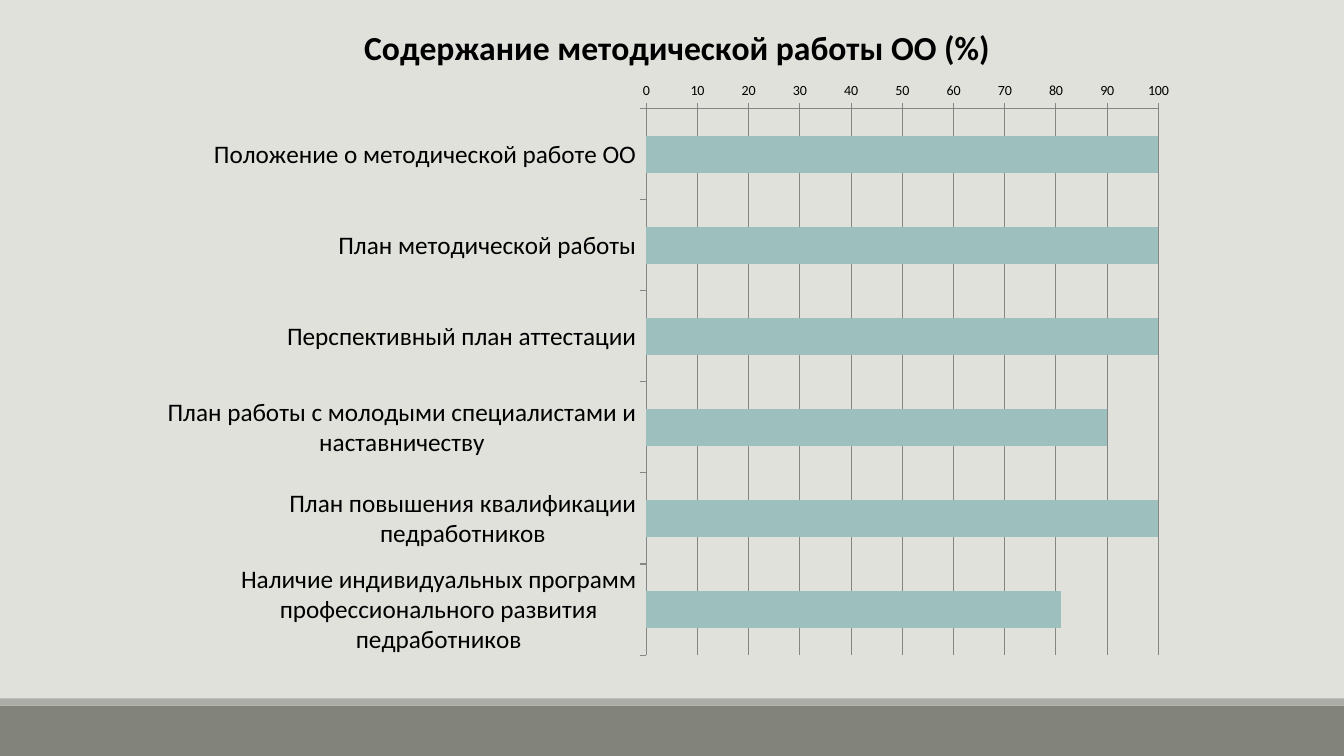
from lxml import etree
from pptx import Presentation
from pptx.chart.data import CategoryChartData
from pptx.dml.color import RGBColor
from pptx.enum.chart import XL_CHART_TYPE, XL_TICK_MARK
from pptx.enum.shapes import MSO_SHAPE
from pptx.oxml import parse_xml
from pptx.oxml.ns import nsdecls, qn
from pptx.util import Inches, Pt

BAR = XL_CHART_TYPE.BAR_CLUSTERED
TICK_OUT, TICK_NONE = XL_TICK_MARK.OUTSIDE, XL_TICK_MARK.NONE
RECT = MSO_SHAPE.RECTANGLE
WIDTH, HEIGHT = 13.33, 7.5

TITLE = "Содержание методической работы ОО (%)"
METHOD_WORK = {
    "Положение о методической работе ОО": 100,
    "План методической работы": 100,
    "Перспективный план аттестации": 100,
    "План работы с молодыми специалистами и наставничеству": 90,
    "План повышения квалификации педработников": 100,
    "Наличие индивидуальных программ профессионального развития педработников": 81,
}


def rgb(value):
    return RGBColor.from_string(value)


class SlideBuilder:
    font, text, line, bar = "Calibri", "000000", "868686", "9DBFBE"

    def __init__(self, slide):
        self.slide = slide

    def background(self, color):
        fill = self.slide.background.fill
        fill.solid()
        fill.fore_color.rgb = rgb(color)

    def band(self, top, height, color):
        sp = self.slide.shapes.add_shape(
            RECT, 0, Inches(top), Inches(WIDTH), Inches(height))
        sp.shadow.inherit = False
        sp.fill.solid()
        sp.fill.fore_color.rgb = rgb(color)
        sp.line.fill.background()

    def style_font(self, font, size, bold=False):
        font.name, font.size, font.bold = self.font, Pt(size), bold
        font.color.rgb = rgb(self.text)

    def style_axis(self, axis, size):
        axis.major_tick_mark, axis.minor_tick_mark = TICK_OUT, TICK_NONE
        axis.format.line.color.rgb = rgb(self.line)
        self.style_font(axis.tick_labels.font, size)

    def bar_chart(self, box, title, values, plot):
        data = CategoryChartData()
        data.categories = list(values)
        data.add_series("Series 1", list(values.values()))
        chart = self.slide.shapes.add_chart(
            BAR, *(Inches(v) for v in box), data).chart
        chart.has_legend = False
        self.style_font(chart.font, 10)

        # Chart title
        chart.has_title = True
        chart.chart_title.include_in_layout = False
        r = chart.chart_title.text_frame.paragraphs[0].add_run()
        r.text = title
        self.style_font(r.font, 24, bold=True)

        # Axes
        category, value = chart.category_axis, chart.value_axis
        self.style_axis(category, 18)
        self.style_axis(value, 10)
        category.reverse_order = True
        value.minimum_scale, value.maximum_scale = 0, 100
        value.major_unit = 10
        value.has_major_gridlines = True
        value.major_gridlines.format.line.color.rgb = rgb(self.line)

        # Bars
        bars = chart.plots[0]
        bars.gap_width = 150
        bars.vary_by_categories = False
        fill = bars.series[0].format.fill
        fill.solid()
        fill.fore_color.rgb = rgb(self.bar)
        self.place_plot(chart, box, plot)

    def place_plot(self, chart, box, plot):
        """Fix the inner plot area, given in slide inches."""
        left, top, width, height = box
        x, y, w, h = plot
        area = chart.element.find(".//" + qn("c:plotArea"))
        for old in area.findall(qn("c:layout")):
            area.remove(old)
        layout = parse_xml(f"<c:layout {nsdecls('c')}/>")
        manual = etree.SubElement(layout, qn("c:manualLayout"))
        settings = {
            "layoutTarget": "inner", "xMode": "edge", "yMode": "edge",
            "x": (x - left) / width, "y": (y - top) / height,
            "w": w / width, "h": h / height,
        }
        for name, setting in settings.items():
            etree.SubElement(manual, qn("c:" + name)).set("val", str(setting))
        area.insert(0, layout)


def main():
    prs = Presentation()
    prs.slide_width, prs.slide_height = Inches(WIDTH), Inches(HEIGHT)
    s = SlideBuilder(prs.slides.add_slide(prs.slide_layouts[6]))

    # Backdrop and footer bands
    s.background("E1E1DB")
    s.band(7, 0.5, "82847C")
    s.band(6.93, 0.07, "ACADA8")

    # Chart of methodical work
    s.bar_chart((1.63, 0, 10.17, 6.64), TITLE, METHOD_WORK,
                plot=(6.41, 1.08, 5.08, 5.42))
    prs.save("out.pptx")


if __name__ == "__main__":
    main()
